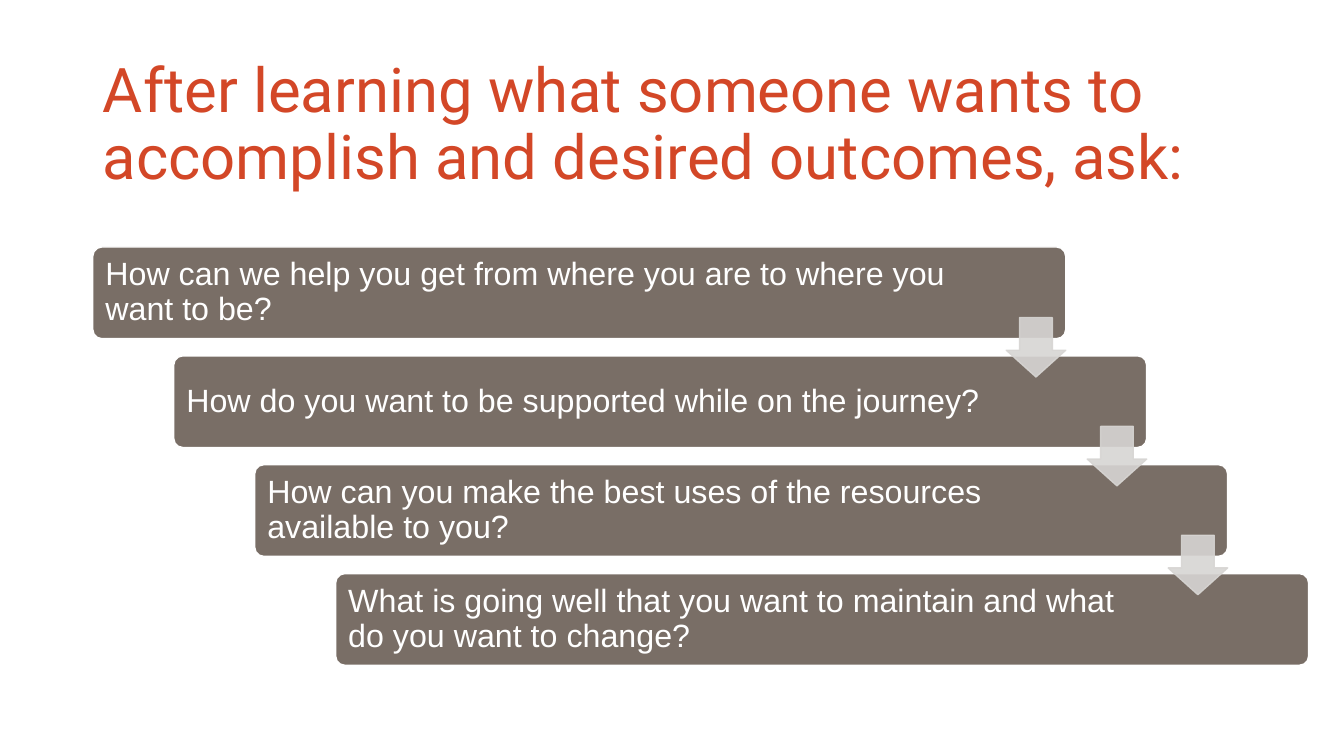
from lxml import etree
from pptx import Presentation
from pptx.dml.color import RGBColor
from pptx.enum.shapes import MSO_SHAPE
from pptx.enum.text import MSO_ANCHOR, MSO_AUTO_SIZE, PP_ALIGN
from pptx.oxml.ns import qn
from pptx.util import Inches, Pt

BAR = MSO_SHAPE.ROUNDED_RECTANGLE
ARROW = MSO_SHAPE.DOWN_ARROW
MIDDLE = MSO_ANCHOR.MIDDLE
LEFT = PP_ALIGN.LEFT
FIXED = MSO_AUTO_SIZE.NONE

EDGE, TOP = 0.92, 2.45
STEP, ROW = 0.803, 1.08
WIDE, HIGH = 9.65, 0.91
SIDE = 0.59

TITLE = "After learning what someone wants to accomplish and desired outcomes, ask:"
ASKS = [
    ("How can we help you get from where you are to where you want to be?", 1.12),
    ("How do you want to be supported while on the journey?", 1.5),
    ("How can you make the best uses of the resources available to you?", 1.5),
    ("What is going well that you want to maintain and what do you want to change?", 1.5),
]


def paint(color, code):
    color.rgb = RGBColor.from_string(code)


def write(shape, text, font, size, code):
    frame = shape.text_frame
    frame.text = text
    frame.word_wrap = True
    frame.auto_size = FIXED
    frame.vertical_anchor = MIDDLE
    para = frame.paragraphs[0]
    para.alignment = LEFT
    para.line_spacing = 0.9
    run = para.runs[0]
    run.font.name = font
    run.font.size = Pt(size)
    paint(run.font.color, code)


def add_form(slide, kind, left, top, width, height, fill, line):
    shape = slide.shapes.add_shape(
        kind, Inches(left), Inches(top), Inches(width), Inches(height))
    shape.shadow.inherit = False
    shape.fill.solid()
    paint(shape.fill.fore_color, fill)
    paint(shape.line.color, line)
    shape.line.width = Pt(1)
    return shape


def add_title(slide):
    title = slide.shapes.title
    title.left, title.top = Inches(EDGE), Inches(0.4)
    title.width, title.height = Inches(12.06), Inches(1.7)
    write(title, TITLE, "Roboto", 44, "D34727")


def add_bar(slide, step, text, gap):
    bar = add_form(slide, BAR, EDGE + step * STEP, TOP + step * ROW,
                   WIDE, HIGH, "796E66", "FFFFFF")
    bar.adjustments[0] = 0.1
    frame = bar.text_frame
    frame.margin_left = frame.margin_top = frame.margin_bottom = Inches(0.1)
    frame.margin_right = Inches(gap)
    write(bar, text, "Arial", 23, "FFFFFF")


def add_arrow(slide, step):
    arrow = add_form(slide, ARROW, EDGE + WIDE - SIDE + step * STEP,
                     TOP + 0.7 + step * ROW, SIDE, SIDE, "D7D5D3", "D7D5D3")
    arrow.adjustments[0] = 0.55
    arrow.adjustments[1] = 0.45
    props = arrow.fill._xPr
    for color in props.iter(qn("a:srgbClr")):
        etree.SubElement(color, qn("a:alpha"), val="90000")


def main():
    deck = Presentation()
    deck.slide_width, deck.slide_height = Inches(13.33), Inches(7.5)
    slide = deck.slides.add_slide(deck.slide_layouts[5])
    add_title(slide)
    for step, (text, gap) in enumerate(ASKS):
        add_bar(slide, step, text, gap)
    for step in range(len(ASKS) - 1):
        add_arrow(slide, step)
    deck.save("out.pptx")


if __name__ == "__main__":
    main()
